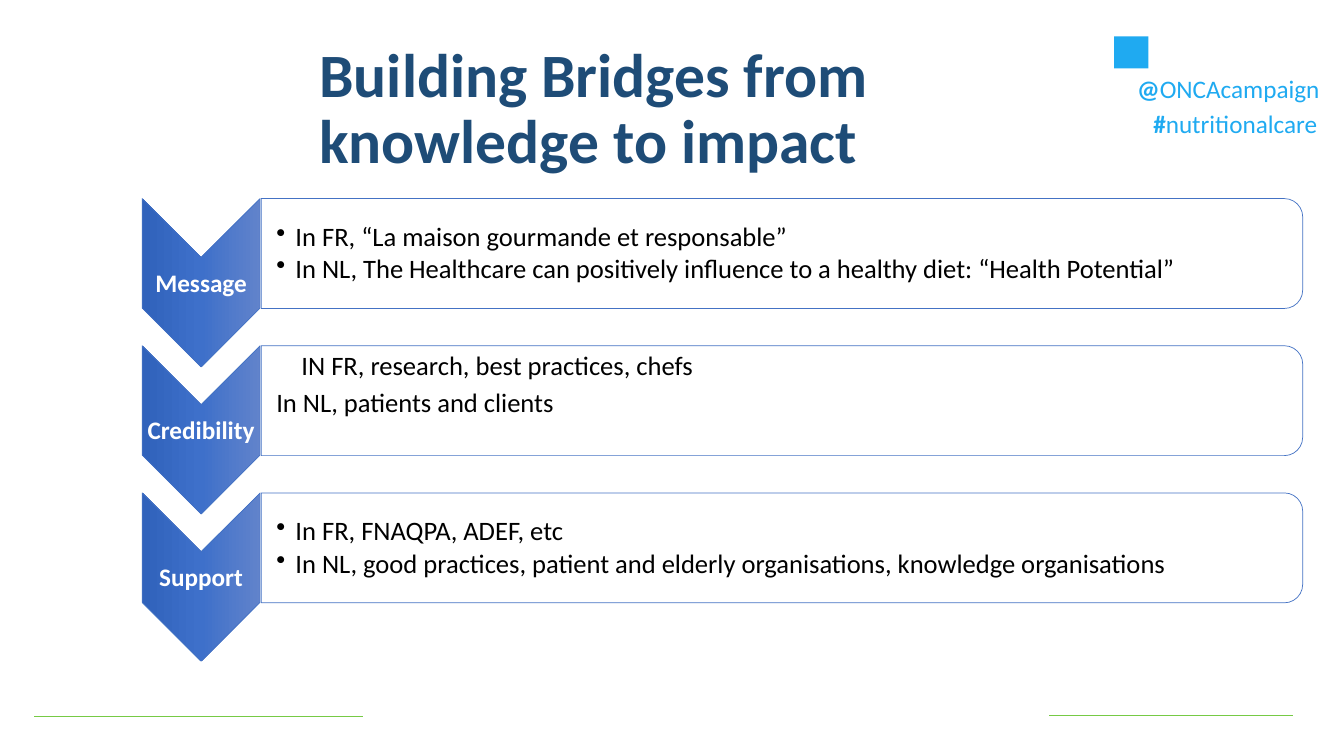
from copy import deepcopy
from dataclasses import dataclass

from lxml.etree import SubElement
from pptx import Presentation
from pptx.dml.color import RGBColor
from pptx.enum.shapes import MSO_CONNECTOR, MSO_SHAPE
from pptx.enum.text import MSO_ANCHOR, PP_ALIGN
from pptx.oxml.ns import qn
from pptx.util import Inches, Pt

WHITE = RGBColor(0xFF, 0xFF, 0xFF)
BLACK = RGBColor(0x00, 0x00, 0x00)
NAVY = RGBColor(0x1E, 0x4C, 0x77)
SKY = RGBColor(0x1F, 0xAA, 0xF1)
GREEN = RGBColor(0x76, 0xCA, 0x45)
BLUE = RGBColor(0x44, 0x72, 0xC4)
CHEVRON_STOPS = [
    (0.0, RGBColor(0x61, 0x83, 0xCB)),
    (0.5, RGBColor(0x3E, 0x70, 0xCA)),
    (1.0, RGBColor(0x30, 0x62, 0xBB)),
]
FIRST_TOP, ROW_STEP = 1.97, 1.46


@dataclass
class Line:
    text: str
    bullet: bool = True
    margin: float = 0.19
    spacing: float = 0.9
    after: float = 2.5


@dataclass
class Step:
    label: str
    lines: list[Line]
    anchor: MSO_ANCHOR = MSO_ANCHOR.MIDDLE


STEPS = [
    Step("Message", [
        Line("In FR, “La maison gourmande et responsable”"),
        Line("In NL, The Healthcare can positively influence to a healthy diet: “Health Potential”"),
    ]),
    Step("Credibility", [
        Line("IN FR, research, best practices, chefs", bullet=False, margin=0.25, after=3),
        Line("In NL, patients and clients", bullet=False, margin=0, spacing=1.0),
    ], MSO_ANCHOR.TOP),
    Step("Support", [
        Line("In FR, FNAQPA, ADEF, etc"),
        Line("In NL, good practices, patient and elderly organisations, knowledge organisations"),
    ]),
]


def add_text(slide, left: float, top: float, width: float, height: float, lines: list[Line], *,
             size: float, color: RGBColor, bold: bool = False, lead: str = "",
             align: PP_ALIGN = PP_ALIGN.LEFT, anchor: MSO_ANCHOR = MSO_ANCHOR.TOP,
             insets: tuple[float, float, float, float] = (0.1, 0.05, 0.1, 0.05),
             wrap: bool = True) -> None:
    """Add a text box; lead is a bold prefix on the first line."""
    box = slide.shapes.add_textbox(Inches(left), Inches(top), Inches(width), Inches(height))
    frame = box.text_frame
    frame.word_wrap = wrap
    frame.vertical_anchor = anchor
    frame.margin_left, frame.margin_top, frame.margin_right, frame.margin_bottom = map(Inches, insets)
    for index, line in enumerate(lines):
        paragraph = frame.add_paragraph() if index else frame.paragraphs[0]
        paragraph.alignment = align
        paragraph.line_spacing = line.spacing
        paragraph.space_after = Pt(line.after)
        properties = paragraph._p.get_or_add_pPr()
        properties.set("marL", str(Inches(line.margin)))
        properties.set("indent", str(-Inches(line.margin) if line.bullet else 0))
        if line.bullet:
            SubElement(properties, qn("a:buChar"), char="•")
        runs = [(line.text, bold)]
        if lead and index == 0:
            runs.insert(0, (lead, True))
        for text, is_bold in runs:
            run = paragraph.add_run()
            run.text = text
            run.font.name = "Calibri"
            run.font.size = Pt(size)
            run.font.bold = is_bold
            run.font.color.rgb = color


def plain(text: str, spacing: float = 1.0) -> list[Line]:
    """Wrap one text as a single line without bullet or spacing."""
    return [Line(text, bullet=False, margin=0, spacing=spacing, after=0)]


def add_turned_shape(slide, kind: MSO_SHAPE, left: float, top: float, width: float, height: float):
    """Add an outlined shape turned a quarter, given by its visible bounds."""
    shape = slide.shapes.add_shape(
        kind, Inches(left + (width - height) / 2), Inches(top + (height - width) / 2),
        Inches(height), Inches(width))
    shape.rotation = 90
    shape.shadow.inherit = False
    shape.line.color.rgb = BLUE
    shape.line.width = Pt(0.5)
    return shape


def fill_chevron(shape) -> None:
    shape.fill.gradient()
    shape.fill.gradient_angle = 270
    first = shape.fill.gradient_stops[0]._gs
    first.addnext(deepcopy(first))
    for stop, (position, color) in zip(shape.fill.gradient_stops, CHEVRON_STOPS):
        stop.position = position
        stop.color.rgb = color


def add_step(slide, step: Step, top: float) -> None:
    fill_chevron(add_turned_shape(slide, MSO_SHAPE.CHEVRON, 1.41, top, 1.17, 1.67))
    add_text(slide, 1.41, top + 0.6, 1.17, 0.5, plain(step.label, 0.9), size=18, color=WHITE,
             bold=True, align=PP_ALIGN.CENTER, anchor=MSO_ANCHOR.MIDDLE, insets=(0.01,) * 4)
    panel = add_turned_shape(slide, MSO_SHAPE.ROUND_2_SAME_RECTANGLE, 2.59, top, 10.33, 1.09)
    panel.fill.solid()
    panel.fill.fore_color.rgb = WHITE
    color = panel._element.spPr.find(qn("a:solidFill")).find(qn("a:srgbClr"))
    SubElement(color, qn("a:alpha"), val="90000")
    add_text(slide, 2.59, top + 0.06, 10.28, 0.98, step.lines, size=19, color=BLACK,
             anchor=step.anchor, insets=(0.15, 0.01, 0.01, 0.01))


def add_footer_line(slide, start: float, end: float, y: float) -> None:
    connector = slide.shapes.add_connector(
        MSO_CONNECTOR.STRAIGHT, Inches(start), Inches(y), Inches(end), Inches(y))
    connector.line.color.rgb = GREEN
    connector.line.width = Pt(0.5)
    SubElement(connector._element.spPr, qn("a:effectLst"))


def main() -> None:
    presentation = Presentation()
    presentation.slide_width = Inches(13.33)
    presentation.slide_height = Inches(7.5)
    slide = presentation.slides.add_slide(presentation.slide_layouts[6])

    add_text(slide, 11.18, 0.68, 2.03, 0.4, plain("ONCAcampaign"), lead="@",
             size=18, color=SKY, wrap=False)
    add_text(slide, 11.34, 1.03, 2.23, 0.4, plain("nutritionalcare"), lead="#", size=18, color=SKY)
    add_footer_line(slide, 3.6, 0.34, 7.11)
    add_footer_line(slide, 12.82, 10.4, 7.1)
    square = slide.shapes.add_shape(
        MSO_SHAPE.RECTANGLE, Inches(11.05), Inches(0.36), Inches(0.34), Inches(0.32))
    square.shadow.inherit = False
    square.fill.solid()
    square.fill.fore_color.rgb = SKY
    square.line.fill.background()

    add_text(slide, 3.07, 0.37, 8.27, 1.45, plain("Building Bridges from knowledge to impact", 0.9),
             size=44, color=NAVY, bold=True, anchor=MSO_ANCHOR.MIDDLE)
    for index, step in enumerate(STEPS):
        add_step(slide, step, FIRST_TOP + index * ROW_STEP)
    presentation.save("out.pptx")


if __name__ == "__main__":
    main()
